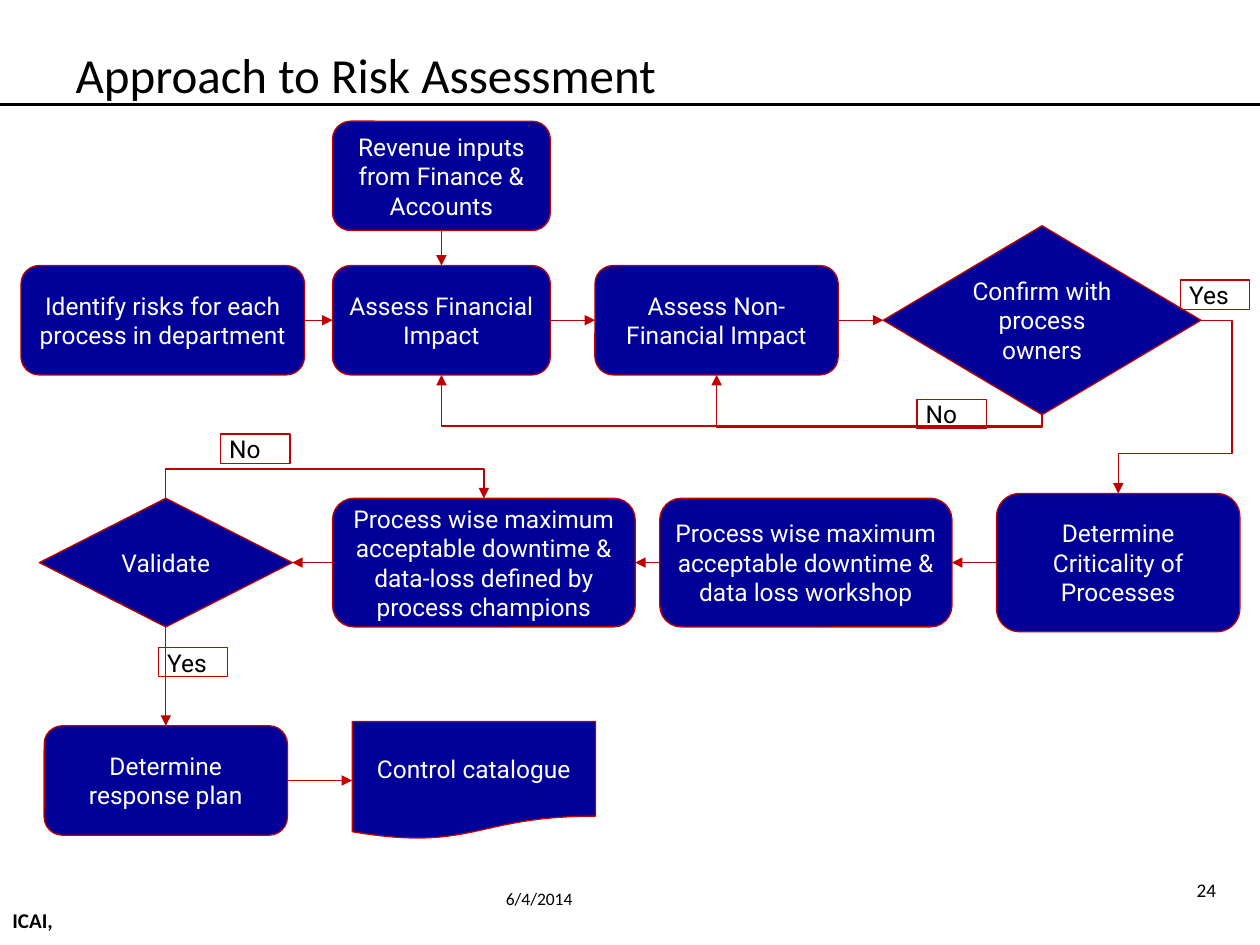
from dataclasses import dataclass

from lxml import etree
from pptx import Presentation
from pptx import util as u
from pptx.dml.color import RGBColor
from pptx.enum import shapes, text
from pptx.oxml import ns

Pt = u.Pt


@dataclass(frozen=True)
class Theme:
    navy: RGBColor = RGBColor(0x00, 0x00, 0x99)
    red: RGBColor = RGBColor(0xC0, 0x00, 0x00)
    black: RGBColor = RGBColor(0x00, 0x00, 0x00)
    white: RGBColor = RGBColor(0xFF, 0xFF, 0xFF)
    heading_font: str = "Calibri"
    flow_font: str = "Roboto"
    title_size: float = 28
    flow_size: float = 14
    footer_size: float = 12
    number_size: float = 11
    date_size: float = 10
    thin: float = 0.75
    rule: float = 1.5


theme = Theme()


def write(shape, words, font, size, color, align, anchor, bold=False):
    """Put one formatted paragraph into a shape."""
    frame = shape.text_frame
    frame.word_wrap = True
    frame.vertical_anchor = anchor
    frame.text = words
    para = frame.paragraphs[0]
    para.alignment = align
    for span in para.runs:
        span.font.name, span.font.size = font, Pt(size)
        span.font.color.rgb, span.font.bold = color, bold


def style_line(line_shape, color, width, arrow=False):
    """Colour a line, drop its shadow and give it an arrowhead if wanted."""
    line_shape.line.color.rgb = color
    line_shape.line.width = Pt(width)
    properties = line_shape.element.spPr
    if arrow:
        outline = properties.find(ns.qn("a:ln"))
        etree.SubElement(outline, ns.qn("a:tailEnd"), type="triangle")
    etree.SubElement(properties, ns.qn("a:effectLst"))


deck = Presentation()
deck.slide_width, deck.slide_height = Pt(720), Pt(540)
page = deck.slides.add_slide(deck.slide_layouts[5])

LEFT, CENTER, RIGHT = text.PP_ALIGN.LEFT, text.PP_ALIGN.CENTER, text.PP_ALIGN.RIGHT
TOP, MIDDLE = text.MSO_ANCHOR.TOP, text.MSO_ANCHOR.MIDDLE

# Title and the rule below it
title = page.shapes.title
title.left, title.top, title.width, title.height = Pt(36), Pt(18), Pt(648), Pt(48)
write(title, "Approach to Risk Assessment", theme.heading_font, theme.title_size,
      theme.black, LEFT, MIDDLE)
rule = page.shapes.add_connector(shapes.MSO_CONNECTOR.STRAIGHT, 0, Pt(59.75), Pt(720), Pt(59.75))
style_line(rule, theme.black, theme.rule)

# Flow steps: name, shape, words, left, middle height of the row, width, height
ROUND = shapes.MSO_SHAPE.ROUNDED_RECTANGLE
DECISION = shapes.MSO_SHAPE.FLOWCHART_DECISION
DOCUMENT = shapes.MSO_SHAPE.FLOWCHART_DOCUMENT
INPUT_ROW, IMPACT_ROW, DOWNTIME_ROW, PLAN_ROW = 100.5, 183, 321.5, 446
steps = [
    ("revenue", ROUND, "Revenue inputs from Finance & Accounts", 190, INPUT_ROW, 124.5, 62.5),
    ("identify", ROUND, "Identify risks for each process in department", 12, IMPACT_ROW, 162, 62.5),
    ("financial", ROUND, "Assess Financial Impact", 190, IMPACT_ROW, 124.5, 62.5),
    ("nonfinancial", ROUND, "Assess Non-Financial Impact", 340, IMPACT_ROW, 139, 62.5),
    ("confirm", DECISION, "Confirm with process owners", 504.75, IMPACT_ROW, 181.5, 108),
    ("criticality", ROUND, "Determine Criticality of Processes", 569.5, DOWNTIME_ROW, 139, 79),
    ("workshop", ROUND, "Process wise maximum acceptable downtime & data loss workshop",
     377, DOWNTIME_ROW, 167, 73.5),
    ("champions", ROUND,
     "Process wise maximum acceptable downtime & data-loss defined by process champions",
     190, DOWNTIME_ROW, 173, 73.5),
    ("validate", DECISION, "Validate", 22.5, DOWNTIME_ROW, 144.5, 73.5),
    ("plan", ROUND, "Determine response plan", 25.25, PLAN_ROW, 139, 62.5),
    ("catalogue", DOCUMENT, "Control catalogue", 201.25, PLAN_ROW, 139, 67.5),
]
boxes = {}
for name, kind, words, left, middle, width, height in steps:
    box = page.shapes.add_shape(kind, Pt(left), Pt(middle - height / 2), Pt(width), Pt(height))
    box.shadow.inherit = False
    box.fill.solid()
    box.fill.fore_color.rgb = theme.navy
    box.line.color.rgb = theme.red
    box.line.width = Pt(theme.thin)
    frame = box.text_frame
    frame.margin_left = frame.margin_right = Pt(5)
    frame.margin_top = frame.margin_bottom = 0
    write(box, words, theme.flow_font, theme.flow_size, theme.white, CENTER, MIDDLE)
    boxes[name] = box

# Straight arrows, joined at the middles of the sides
TOP_SIDE, LEFT_SIDE, BOTTOM_SIDE, RIGHT_SIDE = range(4)
arrows = [
    ("revenue", BOTTOM_SIDE, "financial", TOP_SIDE),
    ("identify", RIGHT_SIDE, "financial", LEFT_SIDE),
    ("financial", RIGHT_SIDE, "nonfinancial", LEFT_SIDE),
    ("nonfinancial", RIGHT_SIDE, "confirm", LEFT_SIDE),
    ("criticality", LEFT_SIDE, "workshop", RIGHT_SIDE),
    ("workshop", LEFT_SIDE, "champions", RIGHT_SIDE),
    ("champions", LEFT_SIDE, "validate", RIGHT_SIDE),
    ("validate", BOTTOM_SIDE, "plan", TOP_SIDE),
    ("plan", RIGHT_SIDE, "catalogue", LEFT_SIDE),
]
for start, start_side, end, end_side in arrows:
    arrow = page.shapes.add_connector(shapes.MSO_CONNECTOR.STRAIGHT, 0, 0, 0, 0)
    arrow.begin_connect(boxes[start], start_side)
    arrow.end_connect(boxes[end], end_side)
    style_line(arrow, theme.red, theme.thin, arrow=True)

# Routed arrows that go round the boxes
center = {name: (box.left + box.width // 2).pt if hasattr(box.left + box.width // 2, "pt")
          else (box.left + box.width // 2) / Pt(1) for name, box in boxes.items()}
top = {name: box.top.pt for name, box in boxes.items()}
bottom = {name: box.top.pt + box.height.pt for name, box in boxes.items()}
confirm_right = boxes["confirm"].left.pt + boxes["confirm"].width.pt
routes = [
    [(center["confirm"], bottom["confirm"]), (center["confirm"], 243.5),
     (center["financial"], 243.5), (center["financial"], bottom["financial"])],
    [(center["confirm"], bottom["confirm"]), (center["confirm"], 244),
     (center["nonfinancial"], 244), (center["nonfinancial"], bottom["nonfinancial"])],
    [(confirm_right, IMPACT_ROW), (704, IMPACT_ROW), (704, 259),
     (center["criticality"], 259), (center["criticality"], top["criticality"])],
    [(center["validate"], top["validate"]), (center["validate"], 268),
     (center["champions"], 268), (center["champions"], top["champions"])],
]
for route in routes:
    points = [(Pt(x), Pt(y)) for x, y in route]
    builder = page.shapes.build_freeform(*points[0])
    builder.add_line_segments(points[1:], close=False)
    path_arrow = builder.convert_to_shape()
    path_arrow.fill.background()
    style_line(path_arrow, theme.red, theme.thin, arrow=True)

# Answers beside the decisions
for answer, left, y in [("Yes", 90.5, 370), ("Yes", 674.5, 160),
                        ("No", 524, 228.25), ("No", 126, 248)]:
    label = page.shapes.add_textbox(Pt(left), Pt(y), Pt(39.75), Pt(16.75))
    label.line.color.rgb = theme.red
    label.line.width = Pt(theme.thin)
    frame = label.text_frame
    frame.margin_left = frame.margin_right = Pt(5)
    frame.margin_top = frame.margin_bottom = 0
    write(label, answer, theme.flow_font, theme.flow_size, theme.black, LEFT, TOP)

# Footer: organisation, date and page number
footers = [
    ("ICAI,", 0, 511, 312, 29, theme.footer_size, LEFT, MIDDLE, True),
    ("6/4/2014", 282, 504, 120, 18, theme.date_size, LEFT, TOP, False),
    ("24", 648, 498.25, 54, 20, theme.number_size, RIGHT, TOP, False),
]
for words, left, y, width, height, size, align, anchor, bold in footers:
    footer = page.shapes.add_textbox(Pt(left), Pt(y), Pt(width), Pt(height))
    write(footer, words, theme.heading_font, size, theme.black, align, anchor, bold)

deck.save("out.pptx")
